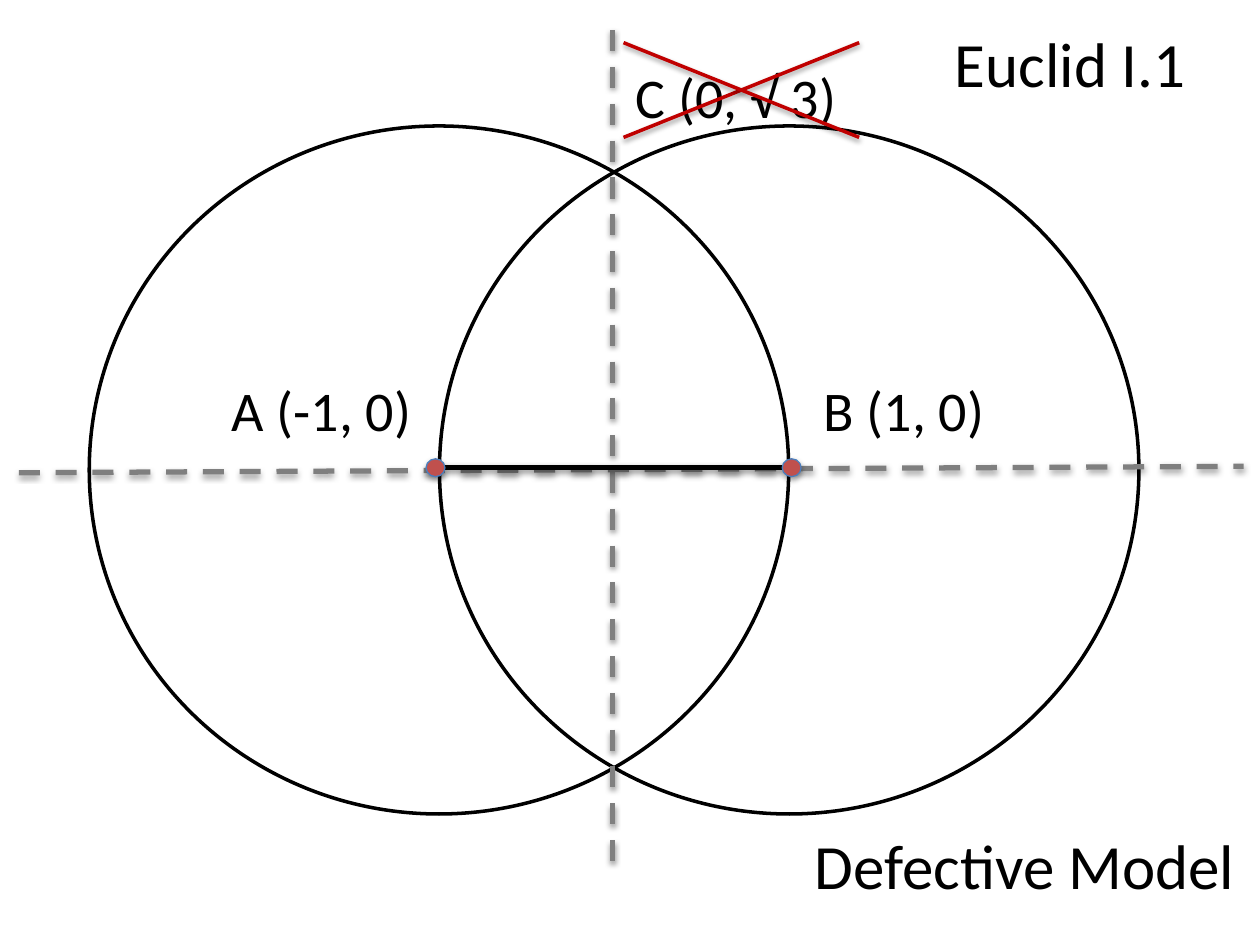
import lxml.etree
import pptx
import pptx.dml.color
import pptx.enum.dml
import pptx.enum.shapes
import pptx.enum.text
import pptx.oxml.ns
import pptx.util

Cm = pptx.util.Cm
Pt = pptx.util.Pt

COLORS = {
    "ink": "000000",
    "paper": "FFFFFF",
    "horizontal axis": "7F7F7F",
    "vertical axis": "808080",
    "cross": "C00000",
    "point": "C0504D",
    "point edge": "4B7EBC",
}


def rgb(name):
    return pptx.dml.color.RGBColor.from_string(COLORS[name])


def add_shadow(properties, distance, opacity):
    """Put a soft downward shadow in the effect list of a shape's properties."""
    qn = pptx.oxml.ns.qn
    effects = properties.find(qn("a:effectLst"))
    if effects is None:
        effects = lxml.etree.SubElement(properties, qn("a:effectLst"))
    shadow = lxml.etree.SubElement(
        effects, qn("a:outerShdw"), blurRad=str(Pt(3.1)), dist=str(Pt(distance)),
        dir="5400000", rotWithShape="0")
    color = lxml.etree.SubElement(shadow, qn("a:srgbClr"), val=COLORS["ink"])
    lxml.etree.SubElement(color, qn("a:alpha"), val=str(opacity * 1000))


def add_ellipse(slide, left, top, width, height, fill, line, weight):
    shape = slide.shapes.add_shape(
        pptx.enum.shapes.MSO_SHAPE.OVAL, Cm(left), Cm(top), Cm(width), Cm(height))
    shape.shadow.inherit = False
    if fill:
        shape.fill.solid()
        shape.fill.fore_color.rgb = rgb(fill)
    else:
        shape.fill.background()
    shape.line.color.rgb = rgb(line)
    shape.line.width = Pt(weight)
    return shape


def add_point(slide, left):
    point = add_ellipse(slide, left, 9.25, 0.38, 0.36, "point", "point edge", 0.75)
    add_shadow(point._element.spPr, 1.8, 35)


def add_line(slide, start, end, color, weight, dashed=False):
    line = slide.shapes.add_connector(
        pptx.enum.shapes.MSO_CONNECTOR.STRAIGHT,
        Cm(start[0]), Cm(start[1]), Cm(end[0]), Cm(end[1]))
    line.line.color.rgb = rgb(color)
    line.line.width = Pt(weight)
    if dashed:
        line.line.dash_style = pptx.enum.dml.MSO_LINE.DASH
    add_shadow(line._element.spPr, 1.6, 38)


def add_label(slide, text, left, top, width, height, size):
    box = slide.shapes.add_textbox(Cm(left), Cm(top), Cm(width), Cm(height))
    frame = box.text_frame
    frame.word_wrap = False
    frame.auto_size = pptx.enum.text.MSO_AUTO_SIZE.SHAPE_TO_FIT_TEXT
    paragraph = frame.paragraphs[0]
    paragraph.text = text
    paragraph.font.name = "Calibri"
    paragraph.font.size = Pt(size)
    paragraph.font.color.rgb = rgb("ink")


def main():
    presentation = pptx.Presentation()
    presentation.slide_width = Cm(25.4)
    presentation.slide_height = Cm(19.05)
    slide = presentation.slides.add_slide(presentation.slide_layouts[6])

    for left, fill in ((1.8, "paper"), (8.86, None)):
        add_ellipse(slide, left, 2.54, 14.1, 13.87, fill, "ink", 2)

    add_line(slide, (0.38, 9.53), (25.07, 9.4), "horizontal axis", 3, dashed=True)
    add_line(slide, (12.34, 0.61), (12.34, 17.42), "vertical axis", 3, dashed=True)

    add_label(slide, "B (1, 0)", 16.36, 7.44, 3.78, 1.62, 32)
    add_label(slide, "A (-1, 0)", 4.42, 7.44, 4.17, 1.62, 32)
    add_label(slide, "C (0, √ 3)", 12.57, 1.14, 4.6, 1.62, 32)
    add_label(slide, "Euclid I.1", 19, 0.36, 5.21, 1.8, 36)
    add_label(slide, "Defective Model", 16.18, 16.54, 9.12, 1.8, 36)

    cross_left, cross_right, cross_top, cross_bottom = 12.57, 17.32, 0.86, 2.77
    add_line(slide, (cross_right, cross_top), (cross_left, cross_bottom), "cross", 2)
    add_line(slide, (cross_left, cross_top), (cross_right, cross_bottom), "cross", 2)

    add_line(slide, (8.97, 9.42), (15.77, 9.42), "ink", 3)
    for left in (8.59, 15.77):
        add_point(slide, left)

    presentation.save("out.pptx")


if __name__ == "__main__":
    main()
